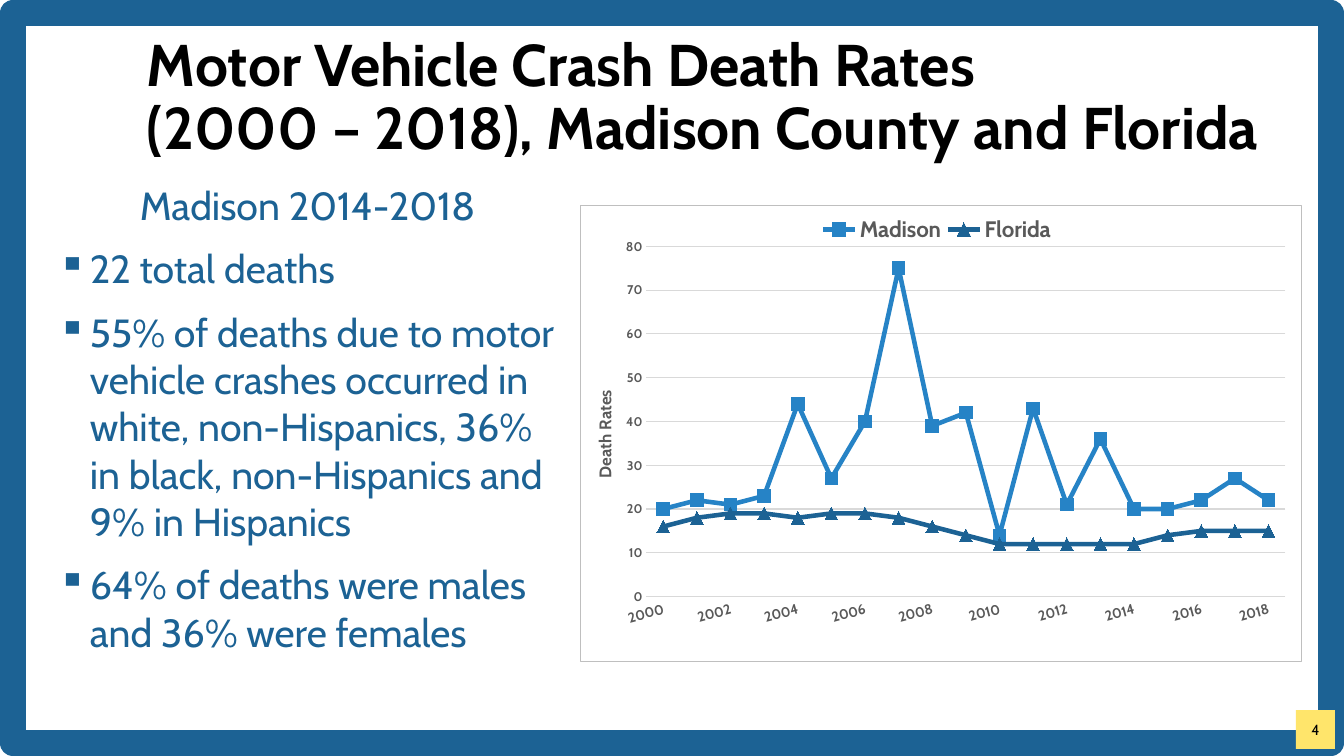
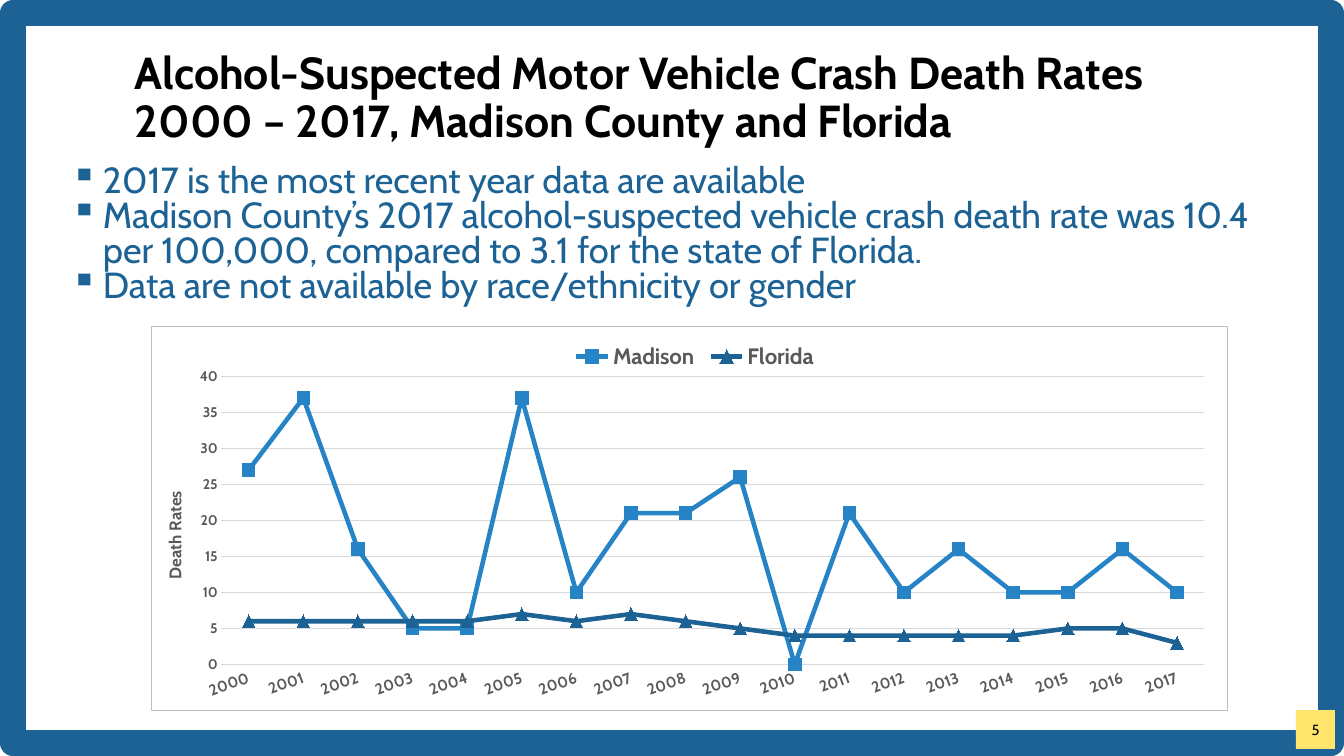
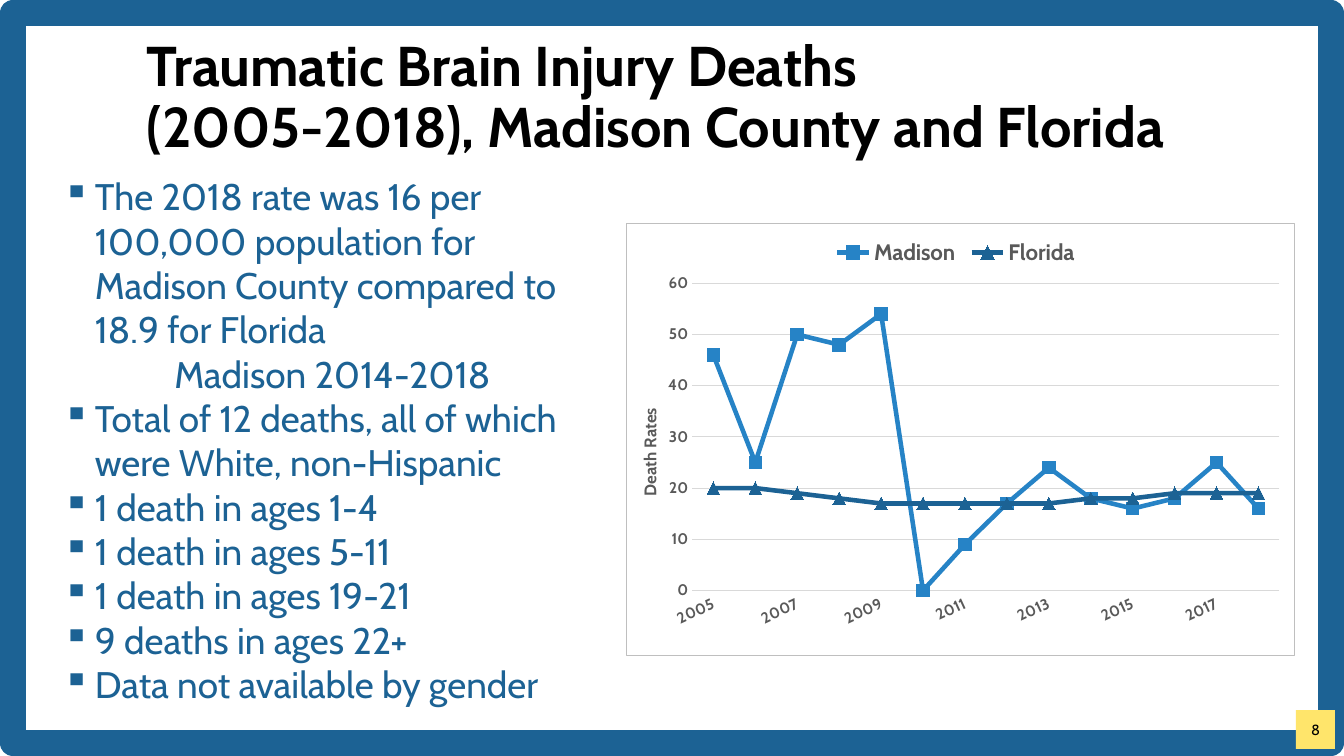
from lxml.etree import SubElement
from pptx import Presentation
from pptx.chart.data import CategoryChartData
from pptx.dml.color import RGBColor
from pptx.enum.chart import XL_CHART_TYPE, XL_LEGEND_POSITION, XL_MARKER_STYLE, XL_TICK_MARK
from pptx.enum.shapes import MSO_SHAPE
from pptx.enum.text import MSO_ANCHOR, PP_ALIGN
from pptx.oxml import parse_xml
from pptx.oxml.ns import nsdecls, qn
from pptx.util import Emu, Pt

SCALE = 914400 / 100.8
FONT = "Cabin"
HUES = {
    "blue": "1C6294",
    "sky": "2683C6",
    "gold": "FFE56B",
    "black": "000000",
    "gray": "595959",
    "grid": "D9D9D9",
    "edge": "BFBFBF",
}


def px(count):
    return Emu(round(count * SCALE))


def place(box):
    return [px(side) for side in box]


def hue(name):
    return RGBColor.from_string(HUES[name])


def style(font, size, name, bold=False):
    font.name = FONT
    font.size = Pt(size)
    font.bold = bold
    font.color.rgb = hue(name)


def stroke(line, name, width):
    line.color.rgb = hue(name)
    line.width = Pt(width)


def add_run(para, text, size, name, bold=False):
    run = para.add_run()
    run.text = text
    style(run.font, size, name, bold)


def add_rect(slide, box):
    rect = slide.shapes.add_shape(MSO_SHAPE.RECTANGLE, *place(box))
    rect.shadow.inherit = False
    return rect


def add_frame(slide):
    frame = add_rect(slide, (13, 13, 1318, 730))
    frame.fill.background()
    stroke(frame.line, "blue", 19)


def add_badge(slide, number):
    badge = add_rect(slide, (1296, 710, 39, 39))
    badge.fill.solid()
    badge.fill.fore_color.rgb = hue("gold")
    badge.line.fill.background()
    text = badge.text_frame
    text.margin_left = text.margin_right = 0
    text.vertical_anchor = MSO_ANCHOR.MIDDLE
    para = text.paragraphs[0]
    para.alignment = PP_ALIGN.CENTER
    add_run(para, str(number), 10.5, "black")


def add_text(slide, box):
    text = slide.shapes.add_textbox(*place(box)).text_frame
    text.word_wrap = True
    return text


def add_title(slide, box, lines, size):
    text = add_text(slide, box)
    text.vertical_anchor = MSO_ANCHOR.MIDDLE
    para = text.paragraphs[0]
    para.line_spacing = 0.9
    for place_no, line in enumerate(lines):
        if place_no:
            para.add_line_break()
        add_run(para, line, size, "black", True)


def set_bullet(para):
    props = para._p.get_or_add_pPr()
    props.set("marL", str(px(37)))
    props.set("indent", str(-px(32)))
    tint = SubElement(props, qn("a:buClr"))
    SubElement(tint, qn("a:srgbClr")).set("val", HUES["blue"])
    SubElement(props, qn("a:buChar")).set("char", "▪")


def add_list(slide, box, items, size, after=0, pitch=1.0, head=None):
    text = add_text(slide, box)
    for order, item in enumerate(items):
        para = text.add_paragraph() if order else text.paragraphs[0]
        para.space_after = Pt(after)
        para.line_spacing = pitch
        if item == head:
            para.alignment = PP_ALIGN.CENTER
            para._p.get_or_add_pPr().set("marL", str(px(5)))
        else:
            set_bullet(para)
        add_run(para, item, size, "blue")


def pin(node, index, area, box, inner=False):
    for old in node.findall(qn("c:layout")):
        node.remove(old)
    left, top, width, height = area
    shares = [(box[0] - left) / width, (box[1] - top) / height]
    shares += [side / whole for side, whole in zip(box[2:], (width, height))]
    layout = parse_xml(f"<c:layout {nsdecls('c')}><c:manualLayout/></c:layout>")
    if inner:
        SubElement(layout[0], qn("c:layoutTarget")).set("val", "inner")
    for tag in ("xMode", "yMode"):
        SubElement(layout[0], qn("c:" + tag)).set("val", "edge")
    for tag, share in zip("xywh", shares):
        SubElement(layout[0], qn("c:" + tag)).set("val", f"{share:.4f}")
    node.insert(index, layout)


def add_edge(chart):
    edge = parse_xml(
        f"<c:spPr {nsdecls('c', 'a')}><a:noFill/><a:ln w='9525'><a:solidFill>"
        f"<a:srgbClr val='{HUES['edge']}'/></a:solidFill></a:ln></c:spPr>"
    )
    chart.element.find(qn("c:chart")).addnext(edge)


def set_years(axis, size, turn, skip):
    axis.major_tick_mark = XL_TICK_MARK.NONE
    stroke(axis.format.line, "grid", 0.75)
    style(axis.tick_labels.font, size, "gray", True)
    node = axis._element
    node.find(qn("c:txPr")).find(qn("a:bodyPr")).set("rot", str(turn * -60000))
    step = parse_xml(f"<c:tickLblSkip {nsdecls('c')} val='{skip}'/>")
    node.find(qn("c:noMultiLvlLbl")).addprevious(step)


def set_rates(axis, size, top, step, area, spot):
    axis.minimum_scale = 0
    axis.maximum_scale = top
    axis.major_unit = step
    axis.major_tick_mark = XL_TICK_MARK.NONE
    axis.format.line.fill.background()
    stroke(axis.major_gridlines.format.line, "grid", 0.75)
    style(axis.tick_labels.font, size, "gray", True)
    text = axis.axis_title.text_frame
    add_run(text.paragraphs[0], "Death Rates", 12, "gray", True)
    turn = text._txBody.find(qn("a:bodyPr"))
    turn.set("rot", "-5400000")
    turn.set("vert", "horz")
    pin(axis.axis_title._element, 1, area, spot)


def add_chart(slide, area, inner, key, spot, start, rates, top, step, sizes, turn, skip=1):
    data = CategoryChartData()
    data.categories = [str(start + year) for year in range(len(rates[0]))]
    for name, row in zip(("Madison", "Florida"), rates):
        data.add_series(name, row)
    chart = slide.shapes.add_chart(XL_CHART_TYPE.LINE_MARKERS, *place(area), data).chart
    chart.has_title = False
    style(chart.font, 10, "black")
    add_edge(chart)
    plot = chart.plots[0]
    plot.vary_by_categories = False
    looks = (("sky", XL_MARKER_STYLE.SQUARE), ("blue", XL_MARKER_STYLE.TRIANGLE))
    for line, (name, mark) in zip(plot.series, looks):
        line.smooth = False
        stroke(line.format.line, name, 3.25)
        line.marker.style = mark
        line.marker.size = 9
        line.marker.format.fill.solid()
        line.marker.format.fill.fore_color.rgb = hue(name)
        stroke(line.marker.format.line, name, 0.75)
    set_years(chart.category_axis, sizes[0], turn, skip)
    set_rates(chart.value_axis, sizes[1], top, step, area, spot)
    chart.has_legend = True
    chart.legend.position = XL_LEGEND_POSITION.BOTTOM
    chart.legend.include_in_layout = False
    style(chart.legend.font, 16, "gray", True)
    pin(chart.legend._element, 1, area, key)
    pin(chart.element.find(qn("c:chart")).find(qn("c:plotArea")), 0, area, inner, True)


def add_slide(deck, number):
    slide = deck.slides.add_slide(deck.slide_layouts[6])
    add_frame(slide)
    add_badge(slide, number)
    return slide


def add_crash(deck):
    slide = add_slide(deck, 4)
    add_title(slide, (137, 46, 1159, 106), (
        "Motor Vehicle Crash Death Rates",
        "(2000 – 2018), Madison County and Florida",
    ), 42)
    head = "Madison 2014-2018"
    add_list(slide, (43, 176, 524, 512), (
        head,
        "22 total deaths",
        "55% of deaths due to motor vehicle crashes occurred in white, "
        "non-Hispanics, 36% in black, non-Hispanics and 9% in Hispanics",
        "64% of deaths were males and 36% were females",
    ), 28, after=12, head=head)
    rates = (
        (20, 22, 21, 23, 44, 27, 40, 75, 39, 42, 14, 43, 21, 36, 20, 20, 22, 27, 22),
        (16, 18, 19, 19, 18, 19, 19, 18, 16, 14, 12, 12, 12, 12, 12, 14, 15, 15, 15),
    )
    add_chart(slide, (580, 205, 722, 457), (646, 246, 640, 351), (816, 214, 242, 30),
              (590, 387), 2000, rates, 80, 10, (10, 9), 15, skip=2)


def add_drink(deck):
    slide = add_slide(deck, 5)
    add_title(slide, (125, 46, 1159, 106), (
        "Alcohol-Suspected Motor Vehicle Crash Death Rates",
        "2000 – 2017, Madison County and Florida",
    ), 32)
    add_list(slide, (56, 161, 1240, 165), (
        "2017 is the most recent year data are available",
        "Madison County’s 2017 alcohol-suspected vehicle crash death rate was 10.4 "
        "per 100,000, compared to 3.1 for the state of Florida.",
        "Data are not available by race/ethnicity or gender",
    ), 25.9, pitch=0.8)
    rates = (
        (27, 37, 16, 5, 5, 37, 10, 21, 21, 26, 0, 21, 10, 16, 10, 10, 16, 10),
        (6, 6, 6, 6, 6, 7, 6, 7, 6, 5, 4, 4, 4, 4, 4, 5, 5, 3),
    )
    add_chart(slide, (151, 326, 1077, 385), (221, 376, 984, 289), (567, 339, 256, 34),
              (160, 488), 2000, rates, 40, 5, (11, 10), 20)


def add_brain(deck):
    slide = add_slide(deck, 8)
    add_title(slide, (137, 46, 1070, 106), (
        "Traumatic Brain Injury Deaths",
        "(2005-2018), Madison County and Florida",
    ), 40)
    head = "Madison 2014-2018"
    add_list(slide, (48, 169, 564, 540), (
        "The 2018 rate was 16 per 100,000 population for Madison County "
        "compared to 18.9 for Florida",
        head,
        "Total of 12 deaths, all of which were White, non-Hispanic",
        "1 death in ages 1-4",
        "1 death in ages 5-11",
        "1 death in ages 19-21",
        "9 deaths in ages 22+",
        "Data not available by gender",
    ), 26.4, head=head)
    rates = (
        (46, 25, 50, 48, 54, 0, 9, 17, 24, 18, 16, 18, 25, 16),
        (20, 20, 19, 18, 17, 17, 17, 17, 17, 18, 18, 19, 19, 19),
    )
    add_chart(slide, (626, 223, 669, 433), (692, 283, 588, 308), (828, 235, 256, 34),
              (635, 405), 2005, rates, 60, 10, (11, 11), 25, skip=2)


def main():
    deck = Presentation()
    deck.slide_width = px(1344)
    deck.slide_height = px(756)
    add_crash(deck)
    add_drink(deck)
    add_brain(deck)
    deck.save("out.pptx")


if __name__ == "__main__":
    main()
